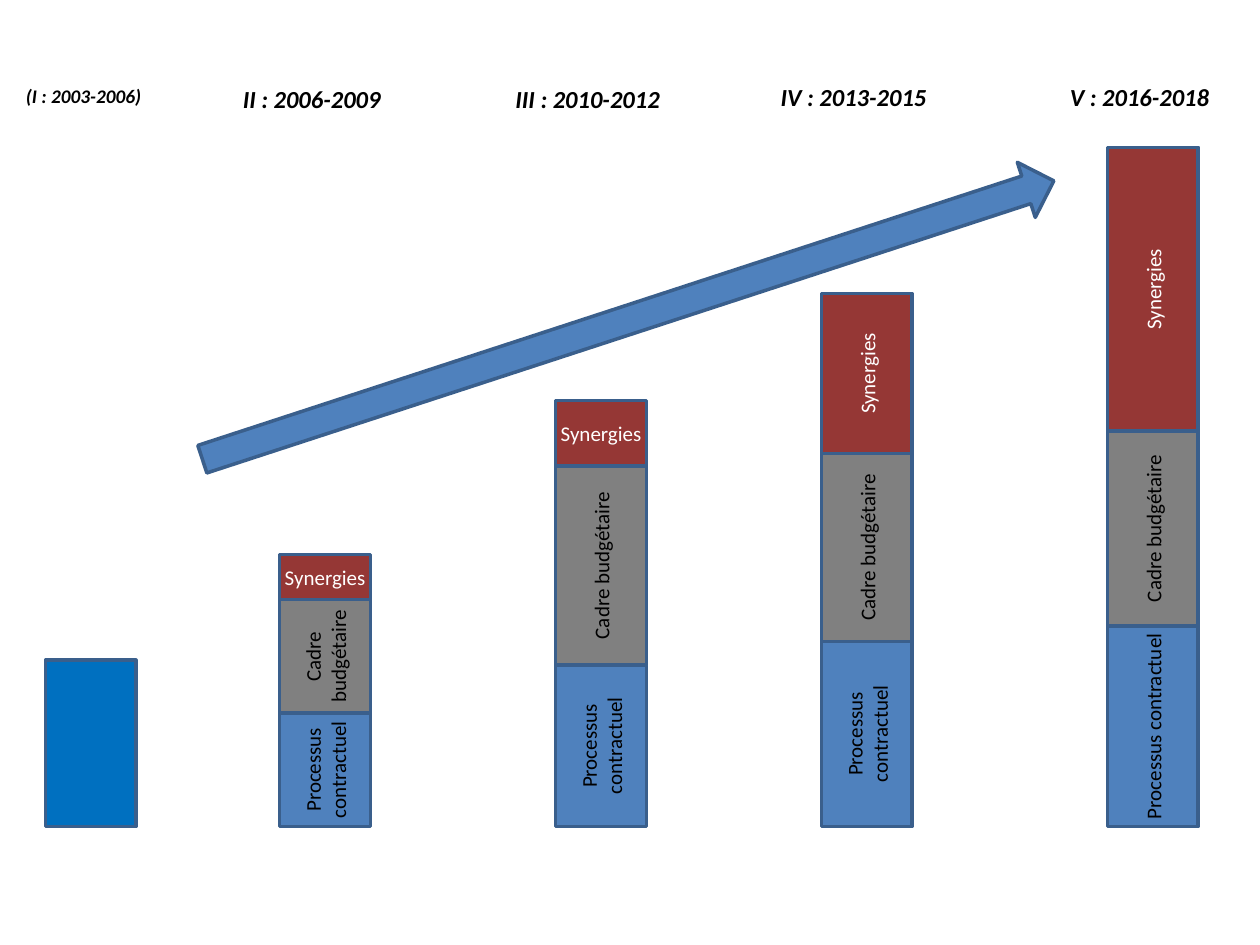
from dataclasses import dataclass

from pptx import Presentation
from pptx.dml.color import RGBColor
from pptx.enum.shapes import MSO_SHAPE as Shape
from pptx.enum.text import MSO_ANCHOR as Anchor, MSO_AUTO_SIZE as AutoSize, PP_ALIGN as Align
from pptx.util import Inches, Pt


@dataclass(frozen=True)
class Theme:
    font: str = "Calibri"
    blue: str = "4F81BD"
    bright_blue: str = "0070C0"
    gray: str = "808080"
    red: str = "953735"
    outline: str = "3A5F8C"
    black: str = "000000"
    white: str = "FFFFFF"
    label_size: int = 12
    heading_size: int = 14
    small_heading_size: int = 11
    line_width: int = 2


theme = Theme()

presentation = Presentation()
presentation.slide_width = Inches(10)
presentation.slide_height = Inches(7.5)
slide = presentation.slides.add_slide(presentation.slide_layouts[6])


def add_block(kind, left, top, width, height, fill):
    shape = slide.shapes.add_shape(
        kind, Inches(left), Inches(top), Inches(width), Inches(height))
    shape.shadow.inherit = False
    shape.fill.solid()
    shape.fill.fore_color.rgb = RGBColor.from_string(fill)
    shape.line.color.rgb = RGBColor.from_string(theme.outline)
    shape.line.width = Pt(theme.line_width)
    return shape


def write_text(text_frame, text, size, color, emphasis=False):
    text_frame.word_wrap = True
    text_frame.text = text
    paragraph = text_frame.paragraphs[0]
    paragraph.alignment = Align.CENTER
    font = paragraph.runs[0].font
    font.name = theme.font
    font.size = Pt(size)
    font.bold = font.italic = emphasis
    font.color.rgb = RGBColor.from_string(color)


# Stacked bars: left edge and segment heights, from the baseline upwards
BASELINE = 6.56
BAR_WIDTH = 0.72
SHORTEST_VERTICAL_LABEL = 0.8
segments = [
    ("Processus contractuel", theme.blue, theme.black),
    ("Cadre budgétaire", theme.gray, theme.black),
    ("Synergies", theme.red, theme.white),
]
bars = [
    (2.22, (0.9, 0.9, 0.36)),
    (4.41, (1.28, 1.58, 0.52)),
    (6.52, (1.47, 1.49, 1.27)),
    (8.79, (1.59, 1.55, 2.25)),
]
for left, heights in bars:
    top = BASELINE
    for (label, fill, color), height in zip(segments, heights):
        top -= height
        segment = add_block(Shape.RECTANGLE, left, top, BAR_WIDTH, height, fill)
        text_frame = segment.text_frame
        text_frame.margin_left = text_frame.margin_right = 0
        text_frame.margin_top = text_frame.margin_bottom = 0
        text_frame.vertical_anchor = Anchor.MIDDLE
        if height > SHORTEST_VERTICAL_LABEL:
            text_frame._txBody.bodyPr.set("vert", "vert270")
        write_text(text_frame, label, theme.label_size, color)

# First period: one plain bar
add_block(Shape.RECTANGLE, 0.36, BASELINE - 1.32, BAR_WIDTH, 1.32, theme.bright_blue)

# Period headings
headings = [
    ("(I : 2003-2006)", -0.07, 0.62, 0.29, theme.small_heading_size),
    ("II : 2006-2009", 1.74, 0.62, 0.34, theme.heading_size),
    ("III : 2010-2012", 3.93, 0.62, 0.34, theme.heading_size),
    ("IV : 2013-2015", 6.04, 0.6, 0.34, theme.heading_size),
    ("V : 2016-2018", 8.31, 0.6, 0.34, theme.heading_size),
]
for text, left, top, height, size in headings:
    heading = slide.shapes.add_textbox(
        Inches(left), Inches(top), Inches(1.47), Inches(height))
    write_text(heading.text_frame, text, size, theme.black, emphasis=True)
    heading.text_frame.auto_size = AutoSize.SHAPE_TO_FIT_TEXT

# Rising trend arrow
arrow = add_block(Shape.RIGHT_ARROW, 1.43, 2.31, 7.11, 0.46, theme.blue)
arrow.rotation = 341.9

presentation.save("out.pptx")
